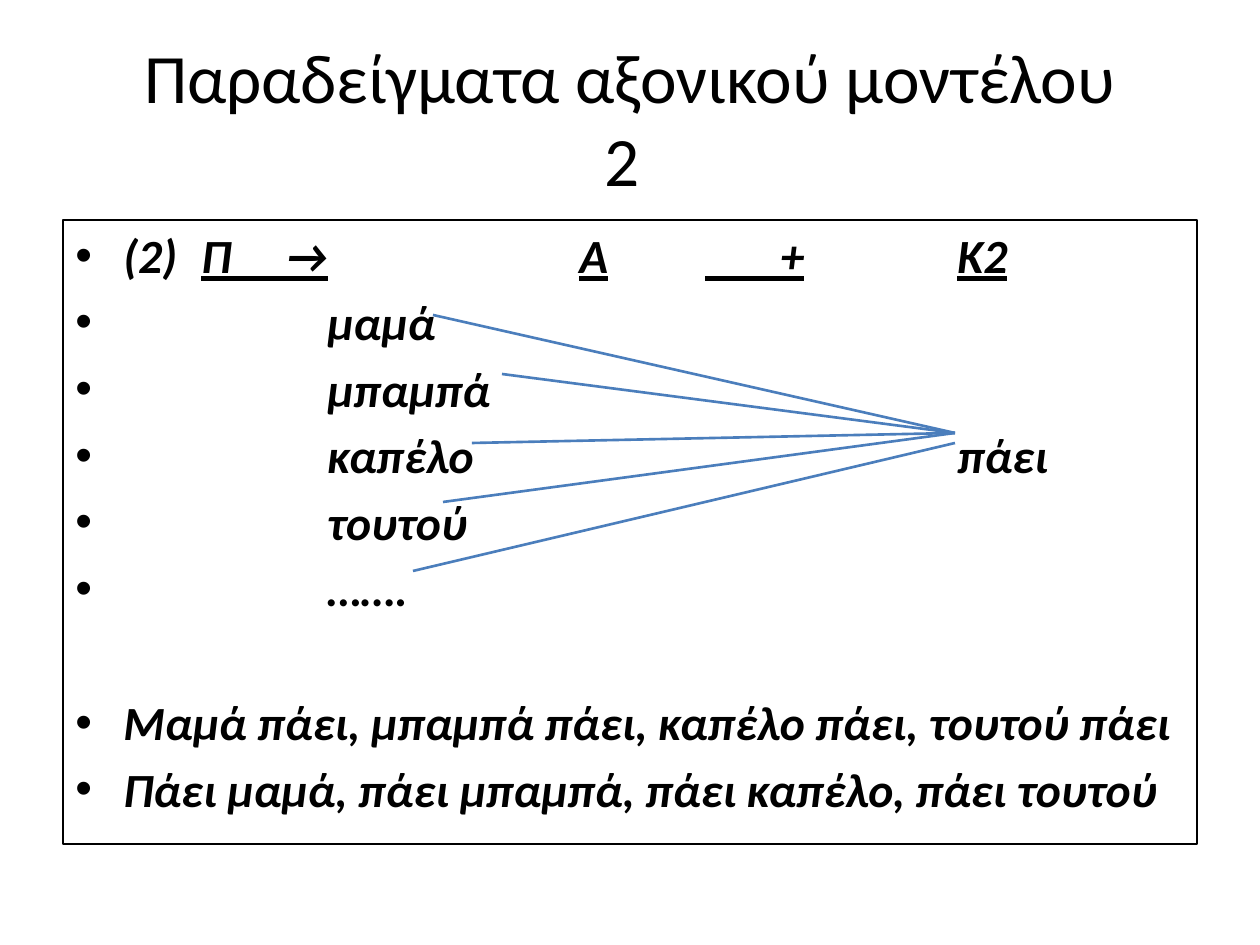
from pptx import Presentation
from pptx.dml.color import RGBColor
from pptx.enum.shapes import MSO_CONNECTOR, MSO_SHAPE
from pptx.enum.text import MSO_ANCHOR, PP_ALIGN
from pptx.oxml.ns import qn
from pptx.util import Emu, Pt
from lxml.etree import SubElement

PX = 914400 // 126
BLACK, BLUE = "000000", "4B7EBC"
INDENT = 48
SPACE_BEFORE = 5.4
BLANK_LINE = 38.5


def rgb(value):
    return RGBColor.from_string(value)


def px(*values):
    return [Emu(v * PX) for v in values]


class SlideBuilder:
    font = "Calibri"
    line_width = Pt(1.5)

    def __init__(self, prs):
        self.s = prs.slides.add_slide(prs.slide_layouts[6])

    def run(self, p, text, **fmt):
        r = p.add_run()
        r.text = text
        for name, value in {"name": self.font, **fmt}.items():
            setattr(r.font, name, value)
        r.font.color.rgb = rgb(BLACK)

    def title(self, box, lines, size):
        tf = self.s.shapes.add_textbox(*px(*box)).text_frame
        tf.word_wrap = True
        tf.vertical_anchor = MSO_ANCHOR.MIDDLE
        p = tf.paragraphs[0]
        p.alignment = PP_ALIGN.CENTER
        for i, text in enumerate(lines):
            if i:
                p.add_line_break()
            self.run(p, text, size=Pt(size))

    def frame(self, box):
        """Add an outlined rectangle and return its text frame."""
        sp = self.s.shapes.add_shape(MSO_SHAPE.RECTANGLE, *px(*box))
        sp.shadow.inherit = False
        sp.fill.background()
        sp.line.color.rgb = rgb(BLACK)
        sp.line.width = self.line_width
        tf = sp.text_frame
        tf.word_wrap = True
        tf.vertical_anchor = MSO_ANCHOR.TOP
        return tf

    def bullet(self, p, runs, tabs, size, before):
        """Fill a bulleted paragraph from (text, underline) pairs."""
        p.alignment = PP_ALIGN.LEFT
        p.space_before = Pt(before)
        pPr = p._p.get_or_add_pPr()
        pPr.set("marL", str(INDENT * PX))
        pPr.set("indent", str(-INDENT * PX))
        SubElement(pPr, qn("a:buFont")).set("typeface", "Arial")
        SubElement(pPr, qn("a:buChar")).set("char", "•")
        if tabs:
            tab_list = SubElement(pPr, qn("a:tabLst"))
            for stop in px(*tabs):
                SubElement(tab_list, qn("a:tab"), pos=str(stop), algn="l")
        for text, underline in runs:
            self.run(p, text, size=Pt(size), bold=True, italic=True,
                     underline=underline)

    def line(self, start, end):
        cn = self.s.shapes.add_connector(
            MSO_CONNECTOR.STRAIGHT, *px(*start, *end))
        cn.line.color.rgb = rgb(BLUE)
        cn.line.width = self.line_width
        SubElement(cn._element.spPr, qn("a:effectLst"))


def main():
    prs = Presentation()
    prs.slide_width, prs.slide_height = px(1260, 945)
    slide = SlideBuilder(prs)
    slide.title((63, 38, 1134, 158),
                ["Παραδείγματα αξονικού μοντέλου", "2 "], 39.6)

    words = ["μαμά", "μπαμπά", "καπέλο\tπάει", "τουτού", "……."]
    sentences = ["Μαμά πάει, μπαμπά πάει, καπέλο πάει, τουτού πάει",
                 "Πάει μαμά, πάει μπαμπά, πάει καπέλο, πάει τουτού"]
    # The spaces in the rule carry its visible underline.
    rule = [("(2)\t", False), ("Π     →\tΑ\t       +\tΚ2", True)]
    rule_tabs, word_tabs = (126, 504, 630, 882), (252, 882)
    rows = [(rule, rule_tabs)]
    rows += [([("\t" + word, False)], word_tabs) for word in words]
    rows += [([(sentence, False)], ()) for sentence in sentences]

    tf = slide.frame((63, 220, 1134, 624))
    first_sentence = len(rows) - len(sentences)
    for i, (runs, tabs) in enumerate(rows):
        p = tf.add_paragraph() if i else tf.paragraphs[0]
        before = SPACE_BEFORE + (BLANK_LINE if i == first_sentence else 0)
        slide.bullet(p, runs, tabs, 27.2, before)

    hub, lower_hub = (955, 433), (955, 443)
    for word_end in [(433, 315), (502, 374), (472, 443), (443, 502)]:
        slide.line(hub, word_end)
    slide.line(lower_hub, (413, 571))

    prs.save("out.pptx")


if __name__ == "__main__":
    main()
